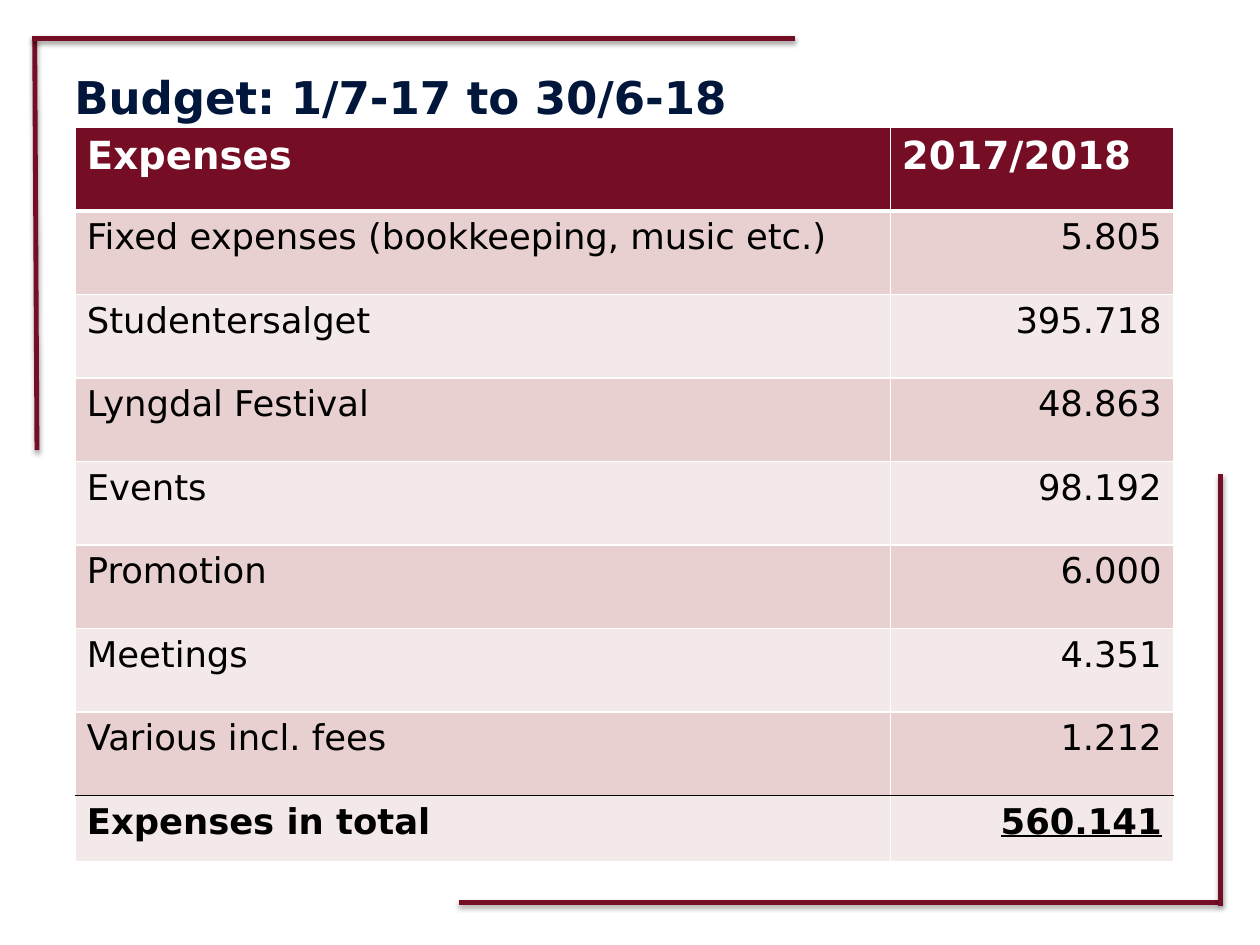
"""Build the budget slide with its expenses table and corner frame."""
import pptx
import pptx.dml.color
import pptx.enum.shapes
import pptx.enum.text
import pptx.oxml
import pptx.oxml.ns
import pptx.util
from pptx.util import Cm

HEADING = "Budget: 1/7-17 to 30/6-18"
EXPENSES = [
    ("Expenses", "2017/2018"),
    ("Fixed expenses (bookkeeping, music etc.)", "5.805"),
    ("Studentersalget", "395.718"),
    ("Lyngdal Festival", "48.863"),
    ("Events", "98.192"),
    ("Promotion", "6.000"),
    ("Meetings", "4.351"),
    ("Various incl. fees", "1.212"),
    ("Expenses in total", "560.141"),
]
FRAME_LINES = [
    (0.76, 0.84, 0.81, 9.86),
    (0.71, 0.84, 17.42, 0.84),
    (26.7, 19.76, 10.06, 19.76),
    (26.75, 19.84, 26.75, 10.39),
]
COLUMN_WIDTHS = (17.86, 6.2)
ROW_HEIGHT, TOTAL_HEIGHT = 1.83, 1.45
THEME = {
    "font": "DejaVu Sans", "maroon": "750D24", "navy": "00163B",
    "white": "FFFFFF", "black": "000000", "bands": ("F4E9E9", "E8D0D0"),
    "heading": 28, "header": 24, "body": 22, "frame": 3,
}
NAMESPACE = pptx.oxml.ns.nsdecls("a")


def rgb(color):
    return pptx.dml.color.RGBColor.from_string(color)


def write(text_frame, text, size, color, bold=False, underline=None, right=False):
    paragraph = text_frame.paragraphs[0]
    if right:
        paragraph.alignment = pptx.enum.text.PP_ALIGN.RIGHT
    run = paragraph.add_run()
    run.text = text
    run.font.name = THEME["font"]
    run.font.size = pptx.util.Pt(size)
    run.font.bold = bold
    run.font.underline = underline
    run.font.color.rgb = rgb(color)


def set_borders(cell, top, bottom, bottom_width):
    white = THEME["white"]
    sides = [("L", white, 1), ("R", white, 1), ("T", top, 1), ("B", bottom, bottom_width)]
    properties = cell._tc.get_or_add_tcPr()
    for position, (side, color, width) in enumerate(sides):
        properties.insert(position, pptx.oxml.parse_xml(
            f'<a:ln{side} {NAMESPACE} w="{pptx.util.Pt(width)}"><a:solidFill>'
            f'<a:srgbClr val="{color}"/></a:solidFill></a:ln{side}>'))


def add_frame_line(slide, ends):
    line = slide.shapes.add_connector(
        pptx.enum.shapes.MSO_CONNECTOR.STRAIGHT, *(Cm(end) for end in ends))
    line.line.color.rgb = rgb(THEME["maroon"])
    line.line.width = pptx.util.Pt(THEME["frame"])
    line._element.spPr.append(pptx.oxml.parse_xml(
        f'<a:effectLst {NAMESPACE}><a:outerShdw blurRad="40000" dist="20000" '
        'dir="5400000" rotWithShape="0"><a:srgbClr val="000000">'
        '<a:alpha val="38000"/></a:srgbClr></a:outerShdw></a:effectLst>'))


def add_expenses(slide):
    last = len(EXPENSES) - 1
    heights = [ROW_HEIGHT] * last + [TOTAL_HEIGHT]
    budget = slide.shapes.add_table(
        len(EXPENSES), len(COLUMN_WIDTHS), Cm(1.65), Cm(2.79),
        Cm(sum(COLUMN_WIDTHS)), Cm(sum(heights))).table
    for column, width in zip(budget.columns, COLUMN_WIDTHS):
        column.width = Cm(width)
    for index, entry in enumerate(EXPENSES):
        budget.rows[index].height = Cm(heights[index])
        header, total = index == 0, index == last
        for column, text in enumerate(entry):
            cell = budget.cell(index, column)
            cell.fill.solid()
            cell.fill.fore_color.rgb = rgb(
                THEME["maroon"] if header else THEME["bands"][index % 2])
            set_borders(cell,
                        top=THEME["black" if total else "white"],
                        bottom=THEME["black" if index == last - 1 else "white"],
                        bottom_width=3 if header else 1)
            amount = column == 1 and not header
            write(cell.text_frame, text,
                  size=THEME["header" if header else "body"],
                  color=THEME["white" if header else "black"],
                  bold=header or total, underline=(amount and total) or None,
                  right=amount)


def main():
    presentation = pptx.Presentation()
    presentation.slide_width, presentation.slide_height = Cm(27.61), Cm(20.7)
    slide = presentation.slides.add_slide(presentation.slide_layouts[6])
    for ends in FRAME_LINES:
        add_frame_line(slide, ends)
    add_expenses(slide)
    heading = slide.shapes.add_textbox(Cm(0), Cm(1.4), Cm(25.43), Cm(1.4)).text_frame
    heading.word_wrap = True
    heading.margin_left = Cm(1.63)
    write(heading, HEADING, size=THEME["heading"], color=THEME["navy"], bold=True)
    presentation.save("out.pptx")


if __name__ == "__main__":
    main()
